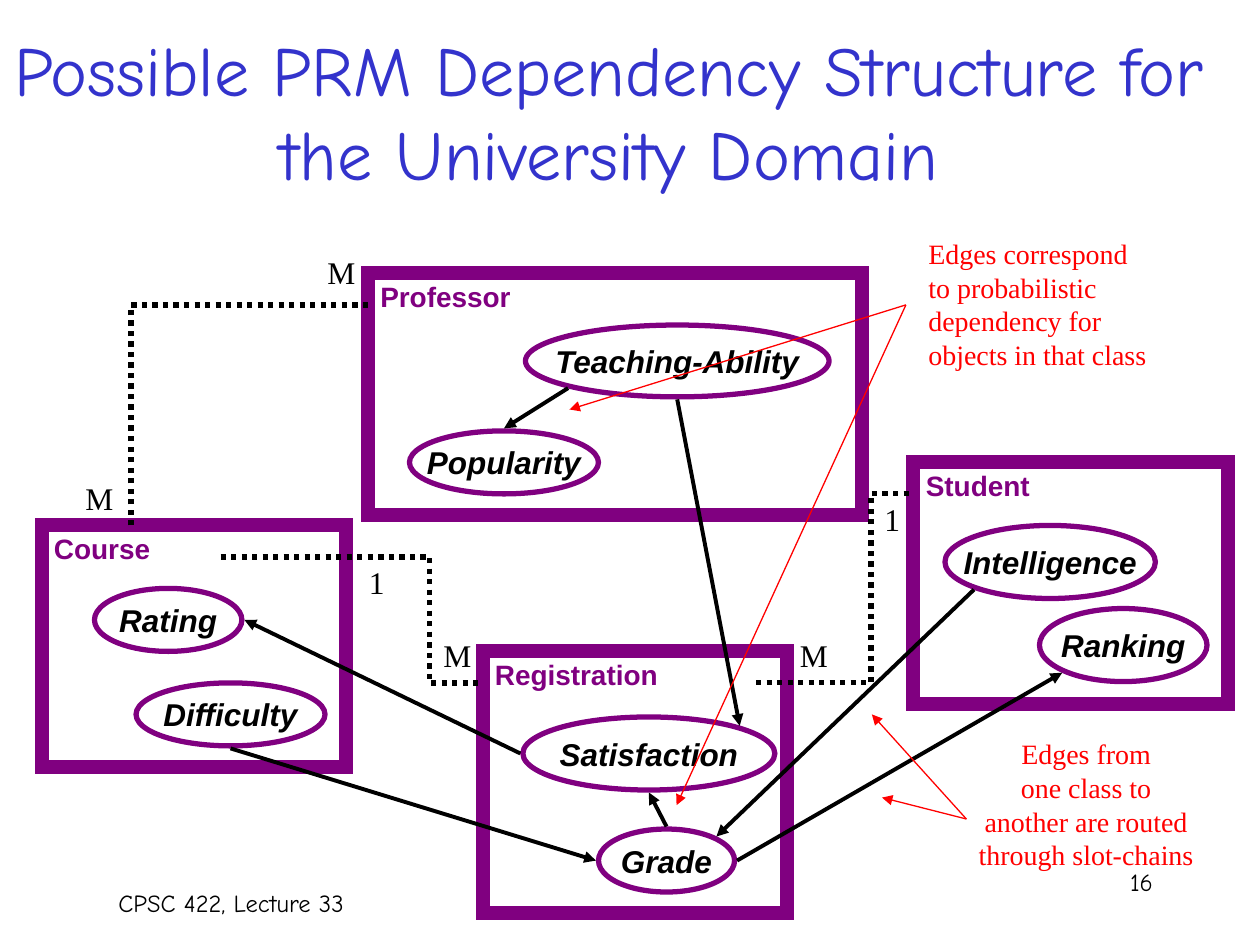
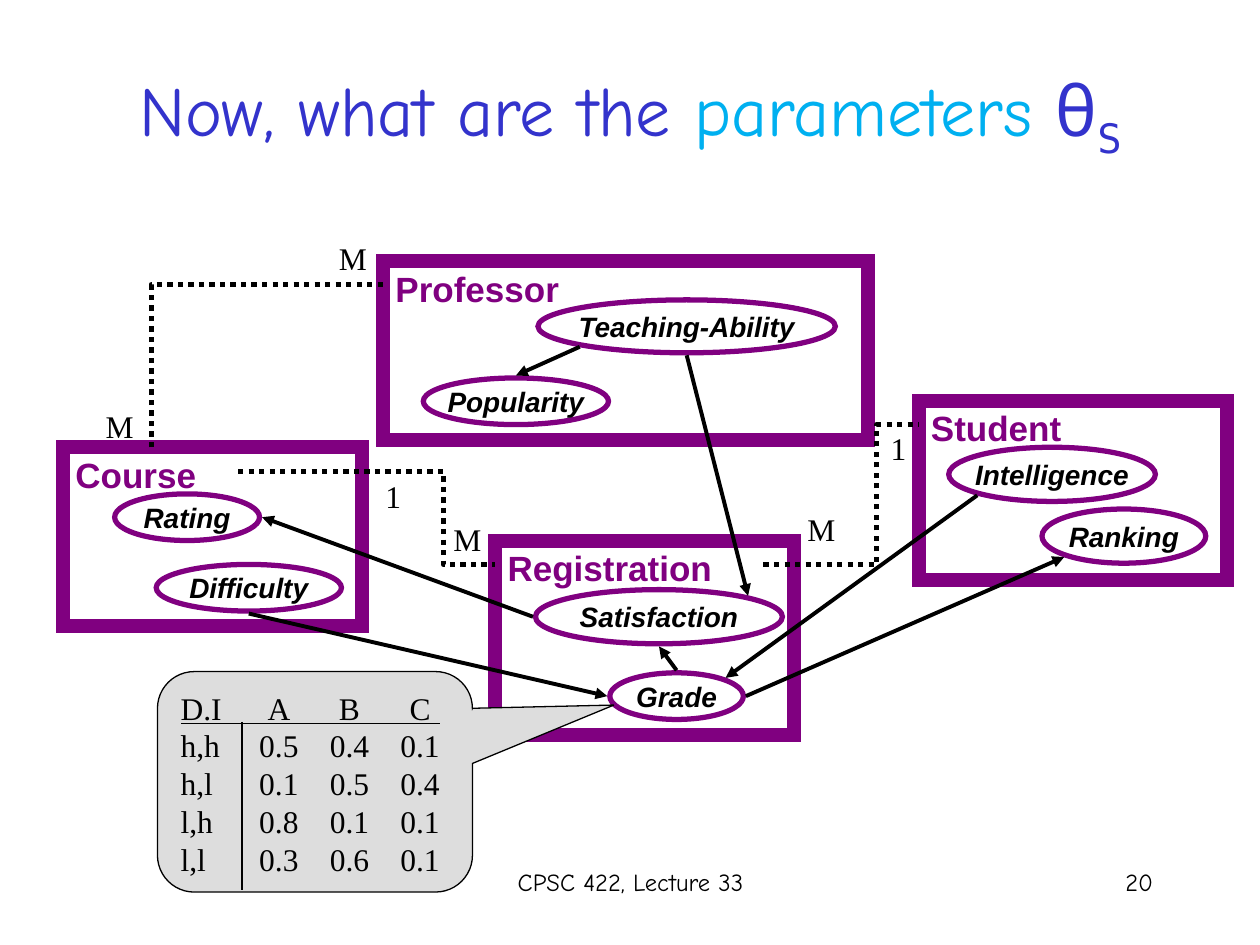
from dataclasses import dataclass
from math import cos, radians, sin

from lxml import etree
from pptx import Presentation
from pptx.dml.color import RGBColor
from pptx.enum.dml import MSO_LINE
from pptx.enum.shapes import MSO_CONNECTOR, MSO_SHAPE
from pptx.enum.text import MSO_ANCHOR, MSO_AUTO_SIZE, PP_ALIGN
from pptx.oxml.ns import qn
from pptx.util import Pt

RECTANGLE, ELLIPSE = MSO_SHAPE.RECTANGLE, MSO_SHAPE.OVAL
CALLOUT = MSO_SHAPE.ROUNDED_RECTANGULAR_CALLOUT
STRAIGHT, ELBOW = MSO_CONNECTOR.STRAIGHT, MSO_CONNECTOR.ELBOW
LEFT, CENTER, RIGHT = PP_ALIGN.LEFT, PP_ALIGN.CENTER, PP_ALIGN.RIGHT
TOP, MIDDLE = MSO_ANCHOR.TOP, MSO_ANCHOR.MIDDLE
DOTTED = MSO_LINE.ROUND_DOT
NO_AUTOFIT = MSO_AUTO_SIZE.NONE

EMU_PER_PX = 9144
SLIDE_WIDTH, SLIDE_HEIGHT = 1000, 750
TITLE_ONLY = 5


@dataclass(frozen=True)
class Theme:
    title_color: str = "3333CC"
    highlight: str = "00B0F0"
    frame: str = "800080"
    note: str = "FF0000"
    ink: str = "000000"
    paper: str = "FFFFFF"
    callout: str = "DDDDDD"
    display_font: str = "Comic Neue"
    symbol_font: str = "DejaVu Sans Mono"
    diagram_font: str = "Arial"
    note_font: str = "Times New Roman"
    title_size: int = 40
    class_size: int = 16
    large_class_size: int = 20
    attribute_size: int = 18
    small_attribute_size: int = 16
    marker_size: int = 18
    note_size: int = 16
    footer_size: int = 14
    frame_width: float = 8
    ellipse_width: float = 3
    arrow_width: float = 2.25
    thin_width: float = 0.75


THEME = Theme()

CLASSES = [
    ("Student", (725, 367, 250, 192), 156),
    ("Course", (33, 417, 242, 192), 142),
    ("Professor", (292, 217, 392, 192), 183),
    ("Registration", (383, 517, 242, 208), 217),
]
ATTRIBUTES = {
    "Intelligence": (750, 417, 167, 58),
    "Ranking": (825, 483, 133, 58),
    "Rating": (75, 467, 117, 50),
    "Difficulty": (108, 542, 150, 50),
    "Popularity": (325, 342, 150, 50),
    "Teaching-Ability": (417, 258, 241, 57),
    "Grade": (475, 658, 108, 50),
    "Satisfaction": (415, 569, 200, 58),
}
ELLIPSE_SITES = ["top", "top left", "left", "bottom left",
                 "bottom", "bottom right", "right", "top right"]
DEPENDENCIES = [
    ("Teaching-Ability", "bottom left", "Popularity", "top"),
    ("Grade", "top", "Satisfaction", "bottom"),
    ("Teaching-Ability", "bottom", "Satisfaction", "top right"),
    ("Satisfaction", "left", "Rating", "right"),
    ("Difficulty", "bottom", "Grade", "left"),
    ("Intelligence", "bottom left", "Grade", "top right"),
    ("Grade", "right", "Ranking", "bottom left"),
]
RELATIONS = [
    ((104, 417), (292, 242), 0),
    ((175, 442), (383, 542), 0.798),
    ((600, 542), (725, 392), 0.731),
]
NOTES = [
    (["Edges from", "one class to", "another are routed", "through slot-chains"],
     (724, 580, 276, 170), CENTER, (767, 650), [(700, 633), (692, 567)]),
    (["Edges correspond", "to probabilistic", "dependency for", "objects in that class"],
     (727, 183, 280, 170), LEFT, (719, 242), [(537, 639), (452, 325)]),
]
GRADE_TABLE = [
    ("D.I", "A", "B", "C"),
    ("h,h", "0.5", "0.4", "0.1"),
    ("h,l", "0.1", "0.5", "0.4"),
    ("l,h", "0.8", "0.1", "0.1"),
    ("l,l", "0.3", "0.6", "0.1"),
]
GRADE_TABS = [78, 134, 190]
GRADE_BOX = (125, 533, 250, 175)
GRADE_POINTER = (0.949, -0.348, 0.167)
GRADE_RULES = [((192, 573), (192, 706)), ((144, 574), (349, 574))]

SLIDES = [
    dict(
        title=[("Possible PRM Dependency Structure for the University Domain", {})],
        title_box=(0, 25, 967, 125),
        scale=(1, 1), shift=(0, 0),
        class_size=THEME.class_size, attribute_size=THEME.attribute_size,
        markers=[("M", 250, 196), ("M", 58, 375), ("M", 342, 500),
                 ("M", 625, 500), ("1", 283, 442), ("1", 692, 392)],
        footer_at=(25, 700), page="16", notes=NOTES, grades=[],
    ),
    dict(
        title=[("Now, what are the ", {}),
               ("parameters ", {"color": THEME.highlight}),
               ("θ", {}),
               ("S", {"font": THEME.symbol_font, "baseline": -25000})],
        title_box=(17, 54, 967, 82),
        scale=(0.981, 0.74), shift=(17.6, 46.6),
        class_size=THEME.large_class_size, attribute_size=THEME.small_attribute_size,
        markers=[("M", 259, 185), ("M", 74, 318), ("M", 350, 408),
                 ("M", 631, 400), ("1", 296, 374), ("1", 697, 336)],
        footer_at=(342, 683), page="20", notes=[], grades=GRADE_TABLE,
    ),
]


def px(value):
    return round(value * EMU_PER_PX)


def rgb(color):
    return RGBColor.from_string(color)


def write(shape, paragraphs, *, size, font, color=THEME.ink, bold=False, italic=False,
          align=LEFT, anchor=TOP, wrap=True, spacing=None, tabs=()):
    frame = shape.text_frame
    frame.auto_size = NO_AUTOFIT
    frame.word_wrap = wrap
    frame.vertical_anchor = anchor
    for index, content in enumerate(paragraphs):
        paragraph = frame.paragraphs[0] if index == 0 else frame.add_paragraph()
        paragraph.alignment = align
        if spacing:
            paragraph.line_spacing = Pt(size * spacing)
        if tabs:
            tab_list = etree.SubElement(paragraph._p.get_or_add_pPr(), qn("a:tabLst"))
            for tab in tabs:
                etree.SubElement(tab_list, qn("a:tab"), pos=str(px(tab)), algn="ctr")
        for text, changes in [(content, {})] if isinstance(content, str) else content:
            run = paragraph.add_run()
            run.text = text
            run.font.size = Pt(size)
            run.font.name = changes.get("font", font)
            run.font.color.rgb = rgb(changes.get("color", color))
            run.font.bold, run.font.italic = bold, italic
            if "baseline" in changes:
                run._r.get_or_add_rPr().set("baseline", str(changes["baseline"]))


def add_text(slide, box, paragraphs, **text_format):
    write(slide.shapes.add_textbox(*map(px, box)), paragraphs, **text_format)


def add_outlined(slide, kind, box, fill, line, width):
    shape = slide.shapes.add_shape(kind, *map(px, box))
    shape.shadow.inherit = False
    shape.fill.solid()
    shape.fill.fore_color.rgb = rgb(fill)
    shape.line.color.rgb = rgb(line)
    shape.line.width = Pt(width)
    etree.SubElement(shape.line._get_or_add_ln(), qn("a:miter"), lim="800000")
    return shape


def add_line(slide, start, end, color, width, kind=STRAIGHT, arrow=False):
    connector = slide.shapes.add_connector(kind, *map(px, (*start, *end)))
    connector.line.color.rgb = rgb(color)
    connector.line.width = Pt(width)
    if arrow:
        etree.SubElement(connector.line._get_or_add_ln(), qn("a:tailEnd"), type="triangle")
    etree.SubElement(connector._element.spPr, qn("a:effectLst"))
    return connector


def site_point(box, site):
    left, top, width, height = box
    angle = radians(90 + 45 * ELLIPSE_SITES.index(site))
    stroke = 2
    return (left + width / 2 + (width / 2 + stroke) * cos(angle),
            top + height / 2 - (height / 2 + stroke) * sin(angle))


def add_dependency(slide, ellipses, boxes, source, source_site, target, target_site):
    connector = add_line(slide, site_point(boxes[source], source_site),
                         site_point(boxes[target], target_site),
                         THEME.ink, THEME.arrow_width, arrow=True)
    joints = connector._element.nvCxnSpPr.cNvCxnSpPr
    for tag, name, site in (("a:stCxn", source, source_site), ("a:endCxn", target, target_site)):
        etree.SubElement(joints, qn(tag), id=str(ellipses[name].shape_id),
                         idx=str(ELLIPSE_SITES.index(site)))


def add_relation(slide, start, end, bend):
    connector = add_line(slide, start, end, THEME.ink, THEME.ellipse_width, kind=ELBOW)
    connector.line.dash_style = DOTTED
    guides = connector._element.spPr.find(qn("a:prstGeom")).get_or_add_avLst()
    etree.SubElement(guides, qn("a:gd"), name="adj1", fmla=f"val {round(bend * 100000)}")


def add_diagram(slide, content):
    (scale_x, scale_y), (shift_x, shift_y) = content["scale"], content["shift"]

    def place(point):
        return round(point[0] * scale_x + shift_x), round(point[1] * scale_y + shift_y)

    def place_box(box):
        return *place(box[:2]), round(box[2] * scale_x), round(box[3] * scale_y)

    for name, box, label_width in CLASSES:
        add_outlined(slide, RECTANGLE, place_box(box), THEME.paper, THEME.frame, THEME.frame_width)
        add_text(slide, place_box((*box[:2], label_width, 50)), [name],
                 size=content["class_size"], font=THEME.diagram_font,
                 color=THEME.frame, bold=True)

    boxes = {name: place_box(box) for name, box in ATTRIBUTES.items()}
    ellipses = {}
    for name, box in boxes.items():
        ellipses[name] = add_outlined(slide, ELLIPSE, box, THEME.paper, THEME.frame,
                                      THEME.ellipse_width)
        write(ellipses[name], [name], size=content["attribute_size"], font=THEME.diagram_font,
              bold=True, italic=True, align=CENTER, anchor=MIDDLE, wrap=False)

    for dependency in DEPENDENCIES:
        add_dependency(slide, ellipses, boxes, *dependency)
    for start, end, bend in RELATIONS:
        add_relation(slide, place(start), place(end), bend)
    for marker, left, top in content["markers"]:
        add_text(slide, (left, top, 42 if marker == "M" else 33, 40), [marker],
                 size=THEME.marker_size, font=THEME.note_font, spacing=1.2)


def add_note(slide, lines, box, align, origin, targets):
    add_text(slide, box, lines, size=THEME.note_size, font=THEME.note_font,
             color=THEME.note, align=align, spacing=1.2)
    for target in targets:
        add_line(slide, origin, target, THEME.note, THEME.thin_width, arrow=True)


def add_grade_callout(slide, rows):
    callout = add_outlined(slide, CALLOUT, GRADE_BOX, THEME.callout, THEME.ink, THEME.thin_width)
    for index, value in enumerate(GRADE_POINTER):
        callout.adjustments[index] = value
    write(callout, ["\t".join(row) for row in rows], size=THEME.marker_size,
          font=THEME.note_font, spacing=1.2, tabs=GRADE_TABS)
    for start, end in GRADE_RULES:
        add_line(slide, start, end, THEME.ink, THEME.thin_width)


def add_slide(presentation, content):
    slide = presentation.slides.add_slide(presentation.slide_layouts[TITLE_ONLY])
    title = slide.shapes.title
    title.left, title.top, title.width, title.height = map(px, content["title_box"])
    write(title, [content["title"]], size=THEME.title_size, font=THEME.display_font,
          color=THEME.title_color, align=CENTER, anchor=MIDDLE, spacing=1.2)
    add_diagram(slide, content)
    for note in content["notes"]:
        add_note(slide, *note)
    if content["grades"]:
        add_grade_callout(slide, content["grades"])
    for text, box, align in (
        ("CPSC 422, Lecture 33", (*content["footer_at"], 317, 50), CENTER),
        (content["page"], (717, 683, 208, 50), RIGHT),
    ):
        add_text(slide, box, [text], size=THEME.footer_size, font=THEME.display_font, align=align)


def main():
    presentation = Presentation()
    presentation.slide_width, presentation.slide_height = px(SLIDE_WIDTH), px(SLIDE_HEIGHT)
    for content in SLIDES:
        add_slide(presentation, content)
    presentation.save("out.pptx")


if __name__ == "__main__":
    main()
